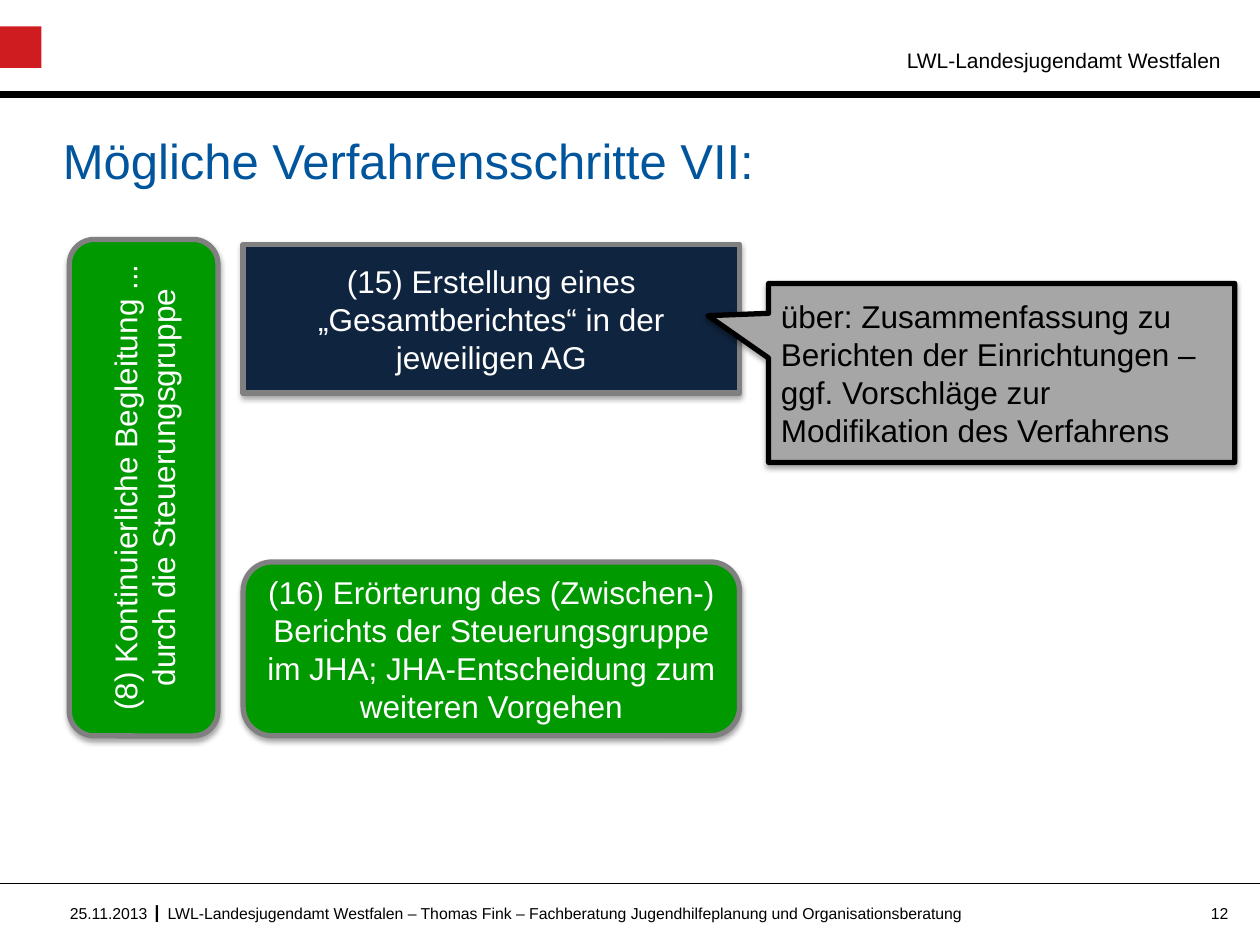
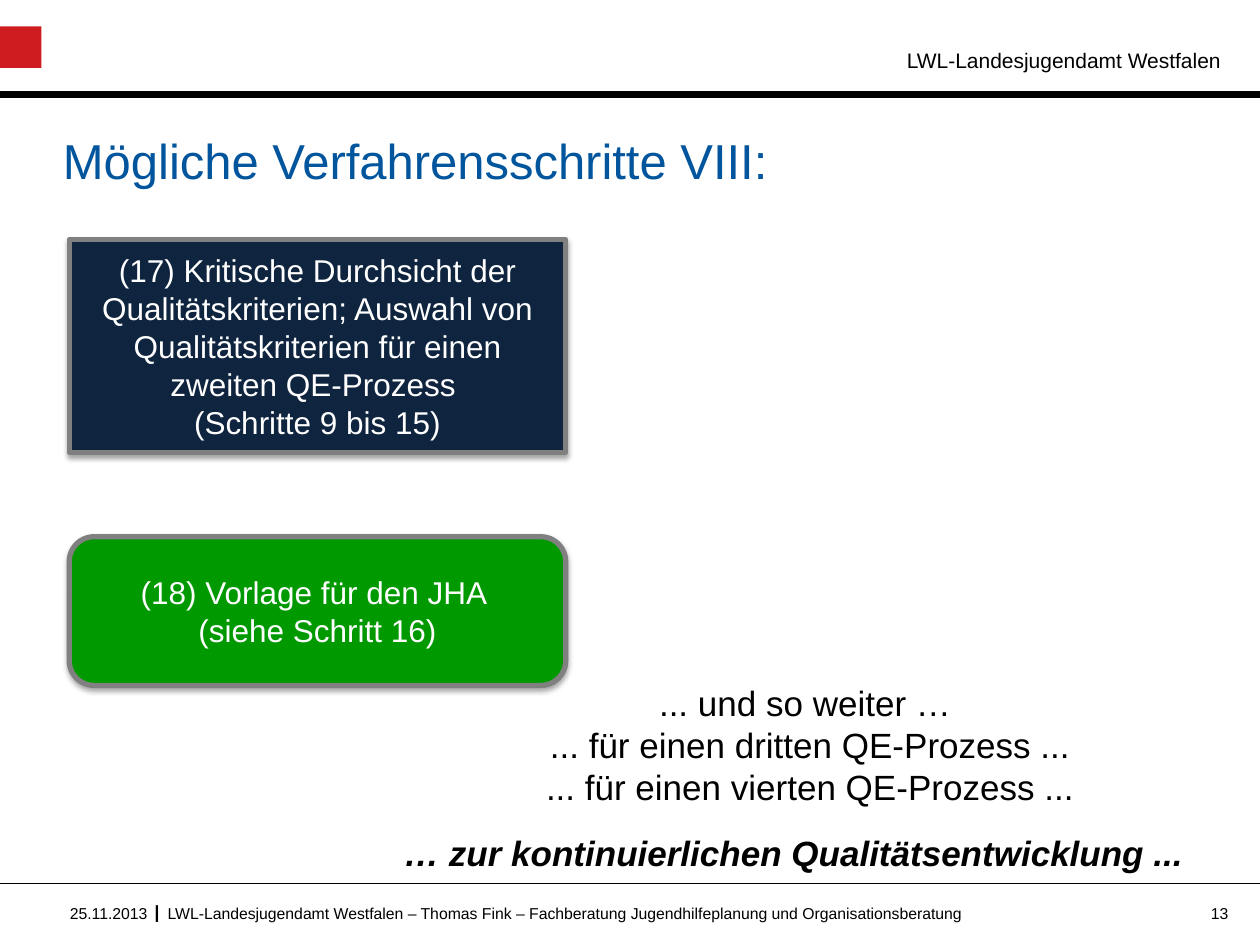
"""Build two slides with process steps of a quality development procedure."""
from lxml.etree import SubElement
from pptx import Presentation
from pptx.dml.color import RGBColor
from pptx.enum.shapes import MSO_CONNECTOR, MSO_SHAPE as SHAPE
from pptx.enum.text import MSO_ANCHOR as ANCHOR, PP_ALIGN as ALIGN
from pptx.oxml.ns import qn
from pptx.util import Inches, Pt

COLORS = {"black": "000000", "white": "FFFFFF", "red": "CF1C21", "title": "00559D",
          "green": "009900", "navy": "0F243E", "border": "808080", "gray": "A6A6A6"}
FONT = "Arial"
OFFICE = "LWL-Landesjugendamt Westfalen"
DATE = "25.11.2013"
FOOTER = f"{OFFICE} – Thomas Fink – Fachberatung Jugendhilfeplanung und Organisationsberatung"
STEP_LENGTH, STEP_DEPTH = 3.94, 1.18

STYLES = {
    "group": (SHAPE.RECTANGLE, "navy", "border", "white", ALIGN.CENTER),
    "committee": (SHAPE.ROUNDED_RECTANGLE, "green", "border", "white", ALIGN.CENTER),
    "note": (SHAPE.RECTANGULAR_CALLOUT, "gray", "black", "black", ALIGN.LEFT),
}

SLIDES = [
    {"number": 12, "title": "Mögliche Verfahrensschritte VII:",
     "steps": [
         ("committee", (-0.83, 3.28, STEP_LENGTH, STEP_DEPTH), 270,
          ["(8) Kontinuierliche Begleitung ... durch die Steuerungsgruppe"]),
         ("group", (1.93, 1.94, STEP_LENGTH, STEP_DEPTH), 0,
          ["(15) Erstellung eines „Gesamtberichtes“ in der jeweiligen AG"]),
         ("note", (6.1, 2.25, 3.7, 1.42), 0,
          ["über: Zusammenfassung zu Berichten der Einrichtungen – ggf. Vorschläge "
           "zur Modifikation des Verfahrens"]),
         ("committee", (1.93, 4.46, STEP_LENGTH, 1.38), 0,
          ["(16) Erörterung des (Zwischen-) Berichts der Steuerungsgruppe im JHA; "
           "JHA-Entscheidung zum weiteren Vorgehen"]),
     ]},
    {"number": 13, "title": "Mögliche Verfahrensschritte VIII:",
     "steps": [
         ("group", (0.55, 1.9, STEP_LENGTH, 1.69), 0,
          ["(17) Kritische Durchsicht der Qualitätskriterien; Auswahl von "
           "Qualitätskriterien für einen zweiten QE-Prozess ", "(Schritte 9 bis 15)"]),
         ("committee", (0.55, 4.26, STEP_LENGTH, STEP_DEPTH), 0,
          ["(18) Vorlage für den JHA ", "(siehe Schritt 16)"]),
     ],
     "outlook": ["... und so weiter … ", "... für einen dritten QE-Prozess ...",
                 "... für einen vierten QE-Prozess ..."],
     "conclusion": "… zur kontinuierlichen Qualitätsentwicklung ..."},
]


def rgb(name):
    return RGBColor.from_string(COLORS[name])


def write(frame, lines, size, color="black", align=ALIGN.LEFT, anchor=ANCHOR.TOP):
    frame.word_wrap = True
    frame.vertical_anchor = anchor
    for index, line in enumerate(lines):
        para = frame.paragraphs[0] if index == 0 else frame.add_paragraph()
        para.text = line
        para.alignment = align
        para.font.name, para.font.size = FONT, Pt(size)
        para.font.color.rgb = rgb(color)
    return frame.paragraphs


def add_text(page, place, lines, size, inset=True, **look):
    frame = page.shapes.add_textbox(*map(Inches, place)).text_frame
    if not inset:
        frame.margin_left = frame.margin_top = frame.margin_right = frame.margin_bottom = 0
    return write(frame, lines, size, **look)


def add_rule(page, top, width):
    rule = page.shapes.add_connector(MSO_CONNECTOR.STRAIGHT, 0, Inches(top), Inches(10), Inches(top))
    rule.line.color.rgb = rgb("black")
    rule.line.width = Pt(width)
    SubElement(rule._element.spPr, qn("a:effectLst"))


def add_block(page, kind, place, fill):
    block = page.shapes.add_shape(kind, *map(Inches, place))
    block.shadow.inherit = False
    block.fill.solid()
    block.fill.fore_color.rgb = rgb(fill)
    return block


def add_shadow(block):
    effects = block._element.spPr.find(qn("a:effectLst"))
    shadow = SubElement(effects, qn("a:outerShdw"), blurRad=str(Pt(3.1)), dist=str(Pt(1.8)),
                        dir="5400000", rotWithShape="0")
    tint = SubElement(shadow, qn("a:srgbClr"), val=COLORS["black"])
    SubElement(tint, qn("a:alpha"), val="35000")


def add_step(page, style, place, rotation, lines):
    kind, fill, border, color, align = STYLES[style]
    step = add_block(page, kind, place, fill)
    step.line.color.rgb = rgb(border)
    step.line.width = Pt(3)
    step.rotation = rotation
    add_shadow(step)
    if style == "note":
        step.adjustments[0], step.adjustments[1] = -0.63, -0.32
    write(step.text_frame, lines, 18, color, align, ANCHOR.MIDDLE)


def add_frame(page, title, number):
    add_rule(page, 0.75, 4)
    add_block(page, SHAPE.RECTANGLE, (0, 0.21, 0.33, 0.33), "red").line.fill.background()
    add_text(page, (5, 0.33, 4.79, 0.3), [OFFICE], 12, align=ALIGN.RIGHT)
    add_rule(page, 7.01, 0.5)
    add_text(page, (1.22, 7.13, 0.11, 0.24), ["I"], 14, inset=False)
    heading = add_text(page, (0.5, 1.06, 9.2, 1.02), [title], 28, inset=False, color="title")
    heading[0].line_spacing = Pt(32)
    for left, width, text, align in [(9.25, 0.5, str(number), ALIGN.RIGHT),
                                     (0.42, 0.75, DATE, ALIGN.RIGHT),
                                     (1.33, 7.25, FOOTER, ALIGN.LEFT)]:
        add_text(page, (left, 7.17, width, 0.22), [text], 9, inset=False, align=align)


def add_outlook(page, lines, conclusion):
    paras = add_text(page, (3.11, 5.48, 6.64, 1.38), lines + [conclusion], 20,
                     align=ALIGN.CENTER, anchor=ANCHOR.MIDDLE)
    last = paras[-1]
    last.alignment = ALIGN.LEFT
    last.space_before = Pt(14)
    last.font.bold = last.font.italic = True


def main():
    deck = Presentation()
    deck.slide_width, deck.slide_height = Inches(10), Inches(7.5)
    for content in SLIDES:
        page = deck.slides.add_slide(deck.slide_layouts[6])
        add_frame(page, content["title"], content["number"])
        for step in content["steps"]:
            add_step(page, *step)
        if "outlook" in content:
            add_outlook(page, content["outlook"], content["conclusion"])
    deck.save("out.pptx")


if __name__ == "__main__":
    main()
